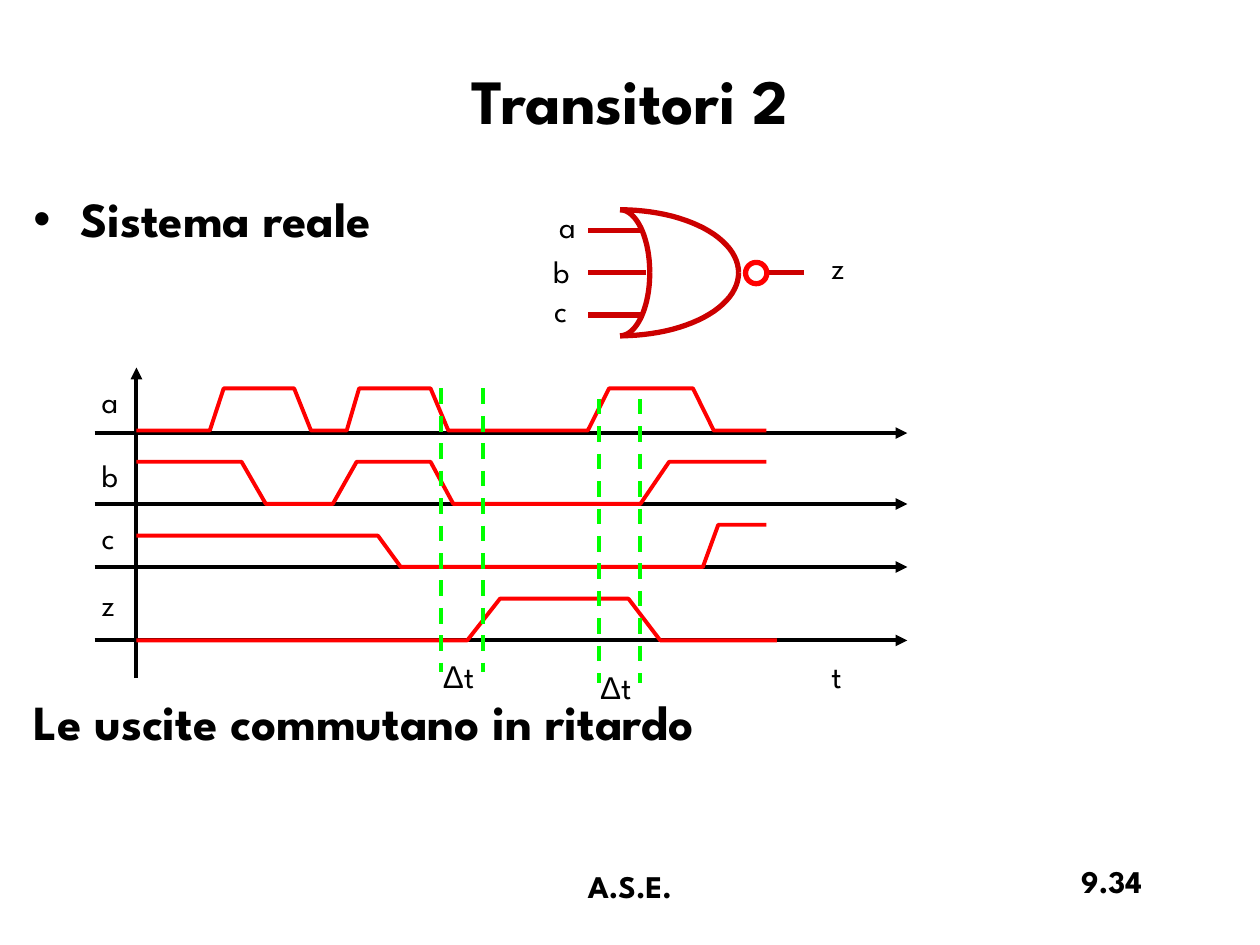
"""Build the slide on the delayed output of a NOR gate."""
import math

import pptx
import pptx.dml.color
import pptx.enum.dml
import pptx.enum.shapes
import pptx.enum.text
import pptx.oxml
import pptx.oxml.ns
import pptx.util

Cm, Pt = pptx.util.Cm, pptx.util.Pt
RGBColor = pptx.dml.color.RGBColor
ALIGN = pptx.enum.text.PP_ALIGN
AUTO_SIZE = pptx.enum.text.MSO_AUTO_SIZE
BLACK = RGBColor(0x00, 0x00, 0x00)
RED = RGBColor(0xFF, 0x00, 0x00)
DARK_RED = RGBColor(0xCC, 0x00, 0x00)
GREEN = RGBColor(0x00, 0xFF, 0x00)
FONT = "League Spartan"


def place(sp, left, top, width, height):
    sp.left, sp.top, sp.width, sp.height = Cm(left), Cm(top), Cm(width), Cm(height)


def set_font(font, size, bold=False, name=FONT):
    font.name, font.size, font.bold = name, Pt(size), bold
    font.color.rgb = BLACK


def add_child(parent, tag, **attrs):
    child = pptx.oxml.parse_xml(f"<a:{tag} {pptx.oxml.ns.nsdecls('a')}/>")
    for key, value in attrs.items():
        child.set(key, value)
    parent.append(child)


def add_title(s, text):
    sp = s.shapes.title
    place(sp, 0.42, 0.42, 24.56, 3.18)
    sp.text_frame.text = text
    p = sp.text_frame.paragraphs[0]
    p.alignment = ALIGN.CENTER
    set_font(p.font, 36, bold=True)


def add_body(s, items):
    sp = s.placeholders[1]
    place(sp, 0.42, 3.81, 24.56, 13.12)
    tf = sp.text_frame
    tf.auto_size = AUTO_SIZE.NONE
    tf.text = "\n".join(text for text, _, _ in items)
    for p, (_, before, bullet) in zip(tf.paragraphs, items):
        p.line_spacing = 0.9
        p.space_before = Pt(before)
        set_font(p.font, 28, bold=True)
        pPr = p._p.get_or_add_pPr()
        pPr.set("marL", str(Cm(0.95)))
        pPr.set("indent", str(Cm(-0.95)))
        bu = {"tag": "buChar", "char": "•"} if bullet else {"tag": "buNone"}
        index = list(pPr).index(pPr.find(pptx.oxml.ns.qn("a:defRPr")))
        add_child(pPr, **bu)
        pPr.insert(index, pPr[-1])


def add_footer(s, text, left, top, width, align):
    sp = s.shapes.add_textbox(Cm(left), Cm(top), Cm(width), Cm(1.27))
    tf = sp.text_frame
    tf.word_wrap = True
    p = tf.paragraphs[0]
    p.text = text
    p.alignment = align
    set_font(p.font, 18, bold=True)


def add_label(s, text, left, top):
    width = 1.3 if len(text) > 1 else 0.89
    tf = s.shapes.add_textbox(Cm(left), Cm(top), Cm(width), Cm(1.02)).text_frame
    tf.word_wrap = False
    tf.auto_size = AUTO_SIZE.SHAPE_TO_FIT_TEXT
    for letter in text:
        r = tf.paragraphs[0].add_run()
        r.text = letter
        set_font(r.font, 18, name="Arial" if letter == "Δ" else FONT)


def add_line(s, start, end, color, width=2.25, dashed=False, arrow=False):
    kind = pptx.enum.shapes.MSO_CONNECTOR.STRAIGHT
    c = s.shapes.add_connector(kind, *(Cm(v) for v in start + end))
    c.line.color.rgb = color
    c.line.width = Pt(width)
    if dashed:
        c.line.dash_style = pptx.enum.dml.MSO_LINE.DASH
    spPr = c._element.spPr
    if arrow:
        add_child(spPr.find(pptx.oxml.ns.qn("a:ln")), "tailEnd", type="triangle")
    add_child(spPr, "effectLst")


def outline(sp, color, width):
    sp.shadow.inherit = False
    sp.fill.background()
    sp.line.color.rgb = color
    sp.line.width = Pt(width)


def add_path(s, points, color, width):
    points = [(Cm(x), Cm(y)) for x, y in points]
    builder = s.shapes.build_freeform(*points[0])
    builder.add_line_segments(points[1:], close=False)
    outline(builder.convert_to_shape(), color, width)


def add_wave(s, levels, xs):
    points = [(x, levels[i // 2 % len(levels)]) for i, x in enumerate(xs)]
    add_path(s, points, RED, 2.25)


def add_gate(s):
    left, middle, half, steps = 12.5, 5.5, 1.27, 24
    angles = [math.pi / 2 * i / steps for i in range(steps + 1)]
    for depth in (2.39, 0.6):
        for side in (-1, 1):
            arc = [(left + depth * math.sin(t), middle + side * half * math.cos(t))
                   for t in angles]
            add_path(s, arc, DARK_RED, 3)
    for y, end in ((4.65, 12.93), (5.5, 13.03), (6.35, 12.93)):
        add_line(s, (end, y), (11.86, y), DARK_RED, 3)
    add_line(s, (16.21, 5.5), (15.44, 5.5), DARK_RED, 3)
    oval = pptx.enum.shapes.MSO_SHAPE.OVAL
    sp = s.shapes.add_shape(oval, Cm(15.03), Cm(5.29), Cm(0.43), Cm(0.43))
    outline(sp, RED, 3)


def add_timing(s):
    add_line(s, (2.75, 13.67), (2.75, 7.41), BLACK, arrow=True)
    for y in (8.73, 10.16, 11.43, 12.91):
        add_line(s, (1.91, y), (18.29, y), BLACK, arrow=True)
    add_wave(s, (8.68, 7.83), (2.75, 4.23, 4.51, 5.93, 6.27, 6.99, 7.24, 8.68,
                               9.04, 11.85, 12.28, 13.97, 14.39, 15.45))
    add_wave(s, (9.31, 10.16), (2.75, 4.87, 5.36, 6.71, 7.19, 8.68, 9.14,
                                12.91, 13.49, 15.45))
    add_wave(s, (10.8, 11.43, 10.58), (2.75, 7.62, 8.08, 14.17, 14.48, 15.45))
    add_wave(s, (12.91, 12.07), (2.75, 9.42, 10.08, 12.67, 13.31, 15.66))
    for x, top in ((8.89, 7.83), (9.74, 7.83), (12.07, 8.04), (12.91, 8.04)):
        add_line(s, (x, top), (x, top + 5.72), GREEN, dashed=True)


def main():
    prs = pptx.Presentation()
    prs.slide_width, prs.slide_height = Cm(25.4), Cm(19.05)
    s = prs.slides.add_slide(prs.slide_layouts[1])
    add_title(s, "Transitori 2")
    add_body(s, [("Sistema reale", 5.6, True),
                 ("Le uscite commutano in ritardo", 257, False)])
    add_gate(s)
    add_timing(s)
    labels = [("a", 11.02, 4.04), ("b", 10.9, 4.95), ("c", 10.92, 5.74),
              ("z", 16.51, 4.88), ("a", 1.8, 7.57), ("b", 1.8, 9.07),
              ("c", 1.8, 10.31), ("z", 1.8, 11.66), ("t", 16.51, 13.13),
              ("Δt", 8.68, 13.13), ("Δt", 11.85, 13.34)]
    for text, left, top in labels:
        add_label(s, text, left, top)
    add_footer(s, "9.34", 17.98, 17.25, 5.29, ALIGN.RIGHT)
    add_footer(s, "A.S.E.", 8.68, 17.35, 8.04, ALIGN.CENTER)
    prs.save("out.pptx")


if __name__ == "__main__":
    main()
